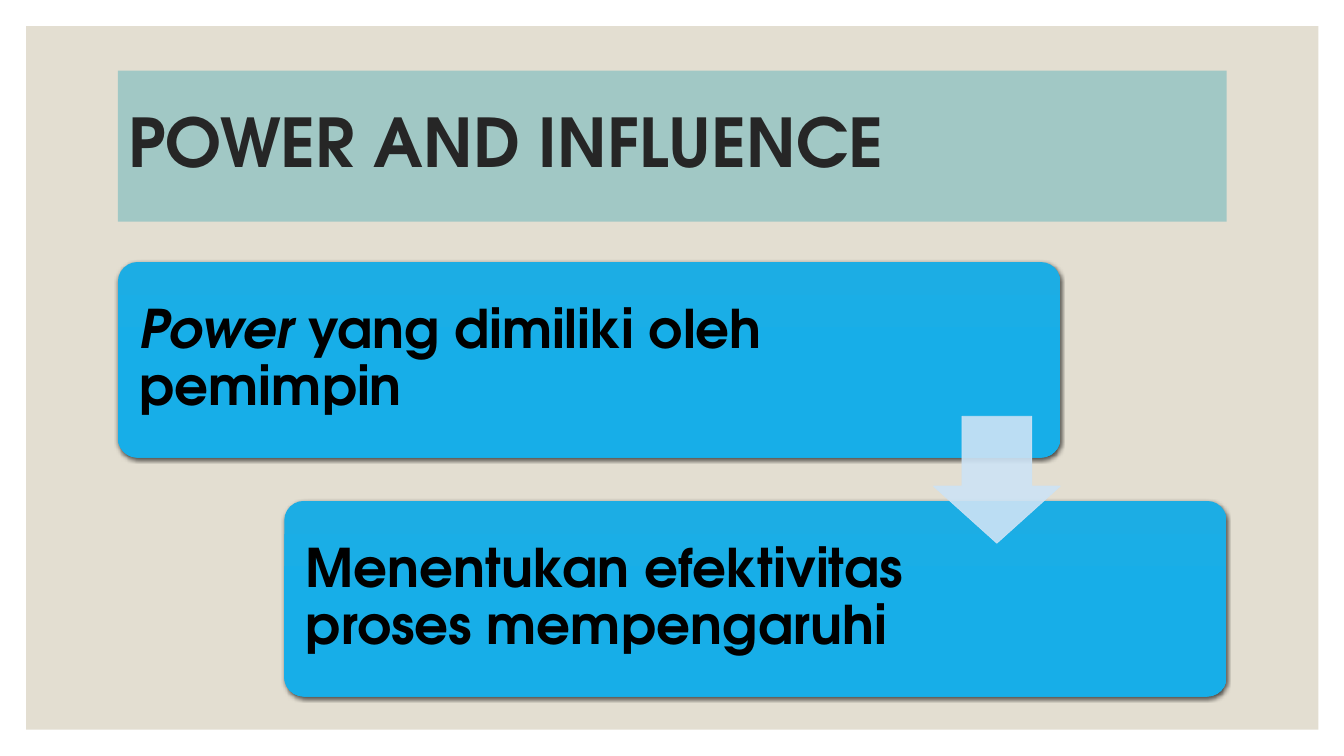
"""Builds the slide on power and influence as two linked steps."""
from dataclasses import dataclass

from lxml import etree
from pptx import Presentation
from pptx.dml.color import RGBColor
from pptx.enum.shapes import MSO_SHAPE
from pptx.enum.text import MSO_ANCHOR, MSO_AUTO_SIZE, PP_ALIGN
from pptx.oxml import parse_xml
from pptx.oxml.ns import qn
from pptx.util import Pt

RECT, ROUND, DOWN = MSO_SHAPE.RECTANGLE, MSO_SHAPE.ROUNDED_RECTANGLE, MSO_SHAPE.DOWN_ARROW
MIDDLE, LEFT, FIXED = MSO_ANCHOR.MIDDLE, PP_ALIGN.LEFT, MSO_AUTO_SIZE.NONE
COLORS = {
    "panel": "E3DED1", "band": "A1C8C5", "title": "262626", "text": "000000",
    "top": "1CADE4", "base": "17AEE8", "arrow": "CDE3F5",
}
BASE = {"name": "TeX Gyre Adventor", "bold": True}
FORMATS = {
    "title": {**BASE, "size": Pt(48)},
    "text": {**BASE, "size": Pt(38)},
}
EDGE, TOP, WIDE, HIGH = 84.24, 187.2, 673.2, 139.68
SHIFT, DROP, INSET = 118.8, 170.64, 11.52
SHADOW = (
    '<a:effectLst xmlns:a="http://schemas.openxmlformats.org/drawingml/2006/main">'
    '<a:outerShdw blurRad="38100" dist="12700" dir="5400000" rotWithShape="0">'
    '<a:srgbClr val="000000"><a:alpha val="63000"/></a:srgbClr>'
    '</a:outerShdw></a:effectLst>'
)


@dataclass(frozen=True)
class Step:
    """One step: its runs with their italics, and the text width."""
    runs: tuple[tuple[str, bool], ...]
    width: float


STEPS = (
    Step((("Power ", True), ("yang dimiliki oleh pemimpin", False)), 529.2),
    Step((("Menentukan efektivitas proses mempengaruhi", False),), 455.76),
)


def color(key: str) -> RGBColor:
    """Gives the named colour."""
    return RGBColor.from_string(COLORS[key])


def paint(shape, key: str) -> None:
    """Fills a shape with one colour."""
    shape.fill.solid()
    shape.fill.fore_color.rgb = color(key)


def style(font, key: str) -> None:
    """Applies the named text format."""
    for name, value in FORMATS[key].items():
        setattr(font, name, value)
    font.color.rgb = color(key)


def frame(shape, **extra):
    """Sets up a text frame and returns its first paragraph."""
    values = {"word_wrap": True, "auto_size": FIXED, "vertical_anchor": MIDDLE, **extra}
    for name, value in values.items():
        setattr(shape.text_frame, name, value)
    para = shape.text_frame.paragraphs[0]
    para.alignment, para.line_spacing = LEFT, 0.9
    return para


def add_form(slide, kind, *box: float):
    """Adds a preset shape without line or shadow."""
    shape = slide.shapes.add_shape(kind, *map(Pt, box))
    shape.shadow.inherit = False
    shape.line.fill.background()
    return shape


def add_title(slide, text: str) -> None:
    """Places the title band over its panel."""
    panel = add_form(slide, RECT, 18.72, 18.72, 923.04, 502.56)
    paint(panel, "panel")
    title = slide.shapes.title
    title.element.addprevious(panel.element)
    title.left, title.top, title.width, title.height = map(Pt, (EDGE, 50.4, 792, 108))
    paint(title, "band")
    run = frame(title).add_run()
    run.text = text
    style(run.font, "title")


def add_step(slide, step: Step, left: float, top: float) -> None:
    """Draws a step card and its text."""
    card = add_form(slide, ROUND, left, top, WIDE, HIGH)
    card.adjustments[0] = 0.1
    card.fill.gradient()
    card.fill.gradient_angle = 270
    for stop, key, place in zip(card.fill.gradient_stops, ("top", "base"), (0, 0.5)):
        stop.color.rgb, stop.position = color(key), place
    props = card.element.spPr
    props.replace(props.find(qn("a:effectLst")), parse_xml(SHADOW))
    label = slide.shapes.add_textbox(
        Pt(left + 3.96), Pt(top + 4.32), Pt(step.width), Pt(HIGH - 8.64))
    sides = ("left", "right", "top", "bottom")
    para = frame(label, **{f"margin_{side}": Pt(INSET) for side in sides})
    for text, slant in step.runs:
        run = para.add_run()
        run.text = text
        style(run.font, "text")
        run.font.italic = slant


def add_arrow(slide) -> None:
    """Draws the pale arrow that links the steps."""
    arrow = add_form(slide, DOWN, 666.72, 297.36, 90.72, 90.72)
    arrow.adjustments[0], arrow.adjustments[1] = 0.55, 0.45
    paint(arrow, "arrow")
    arrow.line.color.rgb = color("arrow")
    arrow.line.width = Pt(0.5)
    for tint in arrow.element.spPr.iter(qn("a:srgbClr")):
        etree.SubElement(tint, qn("a:alpha")).set("val", "90000")


def main() -> None:
    """Builds and saves the slide."""
    deck = Presentation()
    deck.slide_width, deck.slide_height = Pt(960), Pt(540)
    slide = deck.slides.add_slide(deck.slide_layouts[5])
    add_title(slide, "POWER AND INFLUENCE")
    for i, step in enumerate(STEPS):
        add_step(slide, step, EDGE + i * SHIFT, TOP + i * DROP)
    add_arrow(slide)
    deck.save("out.pptx")


if __name__ == "__main__":
    main()
